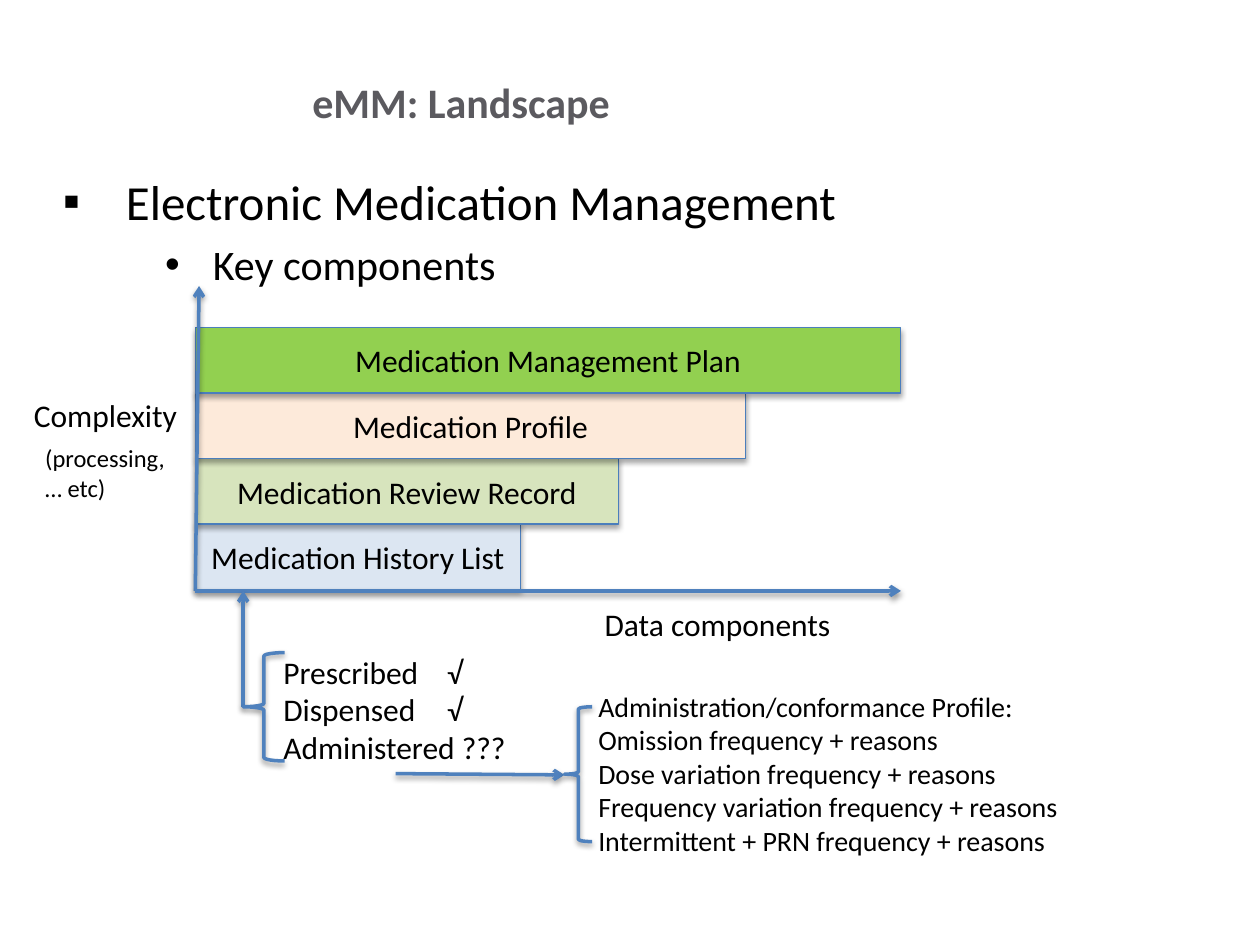
from lxml.etree import SubElement
from pptx import Presentation
from pptx.dml.color import RGBColor
from pptx.enum.shapes import MSO_CONNECTOR as Line, MSO_SHAPE as Shape
from pptx.enum.text import MSO_ANCHOR as Anchor, PP_ALIGN as Align
from pptx.oxml import parse_xml
from pptx.oxml.ns import nsdecls, qn
from pptx.util import Inches, Pt

COLORS = {
    "text": "000000", "title": "5B5A5F", "edge": "4B7EBC", "line": "4F81BD",
    "list": "DCE6F2", "review": "D7E4BD", "profile": "FDEADA", "plan": "92D050",
}


def write(shape, lines, size=18, color="text", bold=False, align=Align.LEFT,
          anchor=Anchor.TOP, inset=(0.1, 0.05, 0.1, 0.05)):
    """Fill a shape with one formatted paragraph per line."""
    frame = shape.text_frame
    frame.word_wrap = True
    frame.vertical_anchor = anchor
    (frame.margin_left, frame.margin_top,
     frame.margin_right, frame.margin_bottom) = map(Inches, inset)
    frame.text = "\n".join(lines)
    for para in frame.paragraphs:
        para.alignment = align
        for run in para.runs:
            font = run.font
            font.name, font.size, font.bold = "Calibri", Pt(size), bold
            font.color.rgb = RGBColor.from_string(COLORS[color])
    return frame.paragraphs


def draw(shape, color="line", width=2, alpha=38, arrow=False):
    """Give a shape its line, soft shadow and optional arrowhead."""
    shape.line.color.rgb = RGBColor.from_string(COLORS[color])
    shape.line.width = Pt(width)
    if arrow:
        SubElement(shape.line._get_or_add_ln(), qn("a:tailEnd"), type="arrow")
    shape._element.spPr.append(parse_xml(
        f'<a:effectLst {nsdecls("a")}><a:outerShdw blurRad="40000" dist="21000" '
        f'dir="5400000" rotWithShape="0"><a:srgbClr val="000000">'
        f'<a:alpha val="{alpha}000"/></a:srgbClr></a:outerShdw></a:effectLst>'))


deck = Presentation()
deck.slide_width, deck.slide_height = Inches(10), Inches(7.5)
slide = deck.slides.add_slide(deck.slide_layouts[5])
shapes = slide.shapes

# Title and bullets
title = shapes.title
title.left, title.top, title.width, title.height = map(Inches, (0.5, 0.39, 6.42, 0.62))
write(title, ["eMM: Landscape"], size=24, color="title", bold=True,
      align=Align.CENTER, anchor=Anchor.BOTTOM, inset=(0, 0.05, 0.1, 0))

body = shapes.add_textbox(*map(Inches, (0.5, 1.31, 9.17, 1.31)))
paras = write(body, ["Electronic Medication Management", "Key components"],
              inset=(0, 0.05, 0.1, 0))
styles = [(0, 28, 0.5, -0.5, "▪"), (1, 24, 1.19, -0.38, "•")]
for para, (level, size, left, hang, mark) in zip(paras, styles):
    para.level = level
    para.runs[0].font.size = Pt(size)
    para.space_before = Pt(size * 0.2)
    props = para._p.get_or_add_pPr()
    props.set("marL", str(Inches(left)))
    props.set("indent", str(Inches(hang)))
    SubElement(props, qn("a:buFont"), typeface="Arial")
    SubElement(props, qn("a:buChar"), char=mark)

# Stacked bars, from the bottom up
AXIS, BASE, STEP = 1.55, 4.68, 0.52
bars = [
    ("Medication History List", 2.58, "list"),
    ("Medication Review Record", 3.36, "review"),
    ("Medication Profile", 4.37, "profile"),
    ("Medication Management Plan", 5.6, "plan"),
]
for row, (label, width, color) in enumerate(bars, 1):
    bar = shapes.add_shape(Shape.RECTANGLE, *map(
        Inches, (AXIS, BASE - row * STEP, width, STEP)))
    bar.fill.solid()
    bar.fill.fore_color.rgb = RGBColor.from_string(COLORS[color])
    draw(bar, color="edge", width=0.75, alpha=35)
    write(bar, [label], align=Align.CENTER, anchor=Anchor.MIDDLE)

# Axes and pointers
arrows = [
    (AXIS, 4.69, 1.58, 2.27),
    (AXIS, 4.69, 7.15, 4.69),
    (1.93, 5.61, 1.93, 4.69),
    (3.14, 6.14, 4.48, 6.15),
]
for ends in arrows:
    draw(shapes.add_connector(Line.STRAIGHT, *map(Inches, ends)), arrow=True)

for place in [(1.93, 5.18, 0.33, 0.86), (4.48, 5.61, 0.22, 1.07)]:
    brace = shapes.add_shape(Shape.LEFT_BRACE, *map(Inches, place))
    brace.fill.background()
    draw(brace)

# Labels
labels = [
    ((0.17, 3.09, 1.41, 0.4), 18, ["Complexity"]),
    ((4.7, 4.75, 2.02, 0.4), 18, ["Data components"]),
    ((0.26, 3.47, 1.16, 0.57), 14, ["(processing,", "… etc)"]),
    ((2.15, 5.13, 1.99, 1.01), 18,
     ["Prescribed\t√", "Dispensed\t√", "Administered ???"]),
    ((4.65, 5.42, 3.9, 1.45), 16, [
        "Administration/conformance Profile:",
        "Omission frequency + reasons",
        "Dose variation frequency + reasons",
        "Frequency variation frequency + reasons",
        "Intermittent + PRN frequency + reasons"]),
]
for place, size, lines in labels:
    box = shapes.add_textbox(*map(Inches, place))
    for para in write(box, lines, size=size):
        if "\t" in para.text:
            tabs = SubElement(para._p.get_or_add_pPr(), qn("a:tabLst"))
            SubElement(tabs, qn("a:tab"), pos=str(Inches(1.3)), algn="l")

deck.save("out.pptx")
